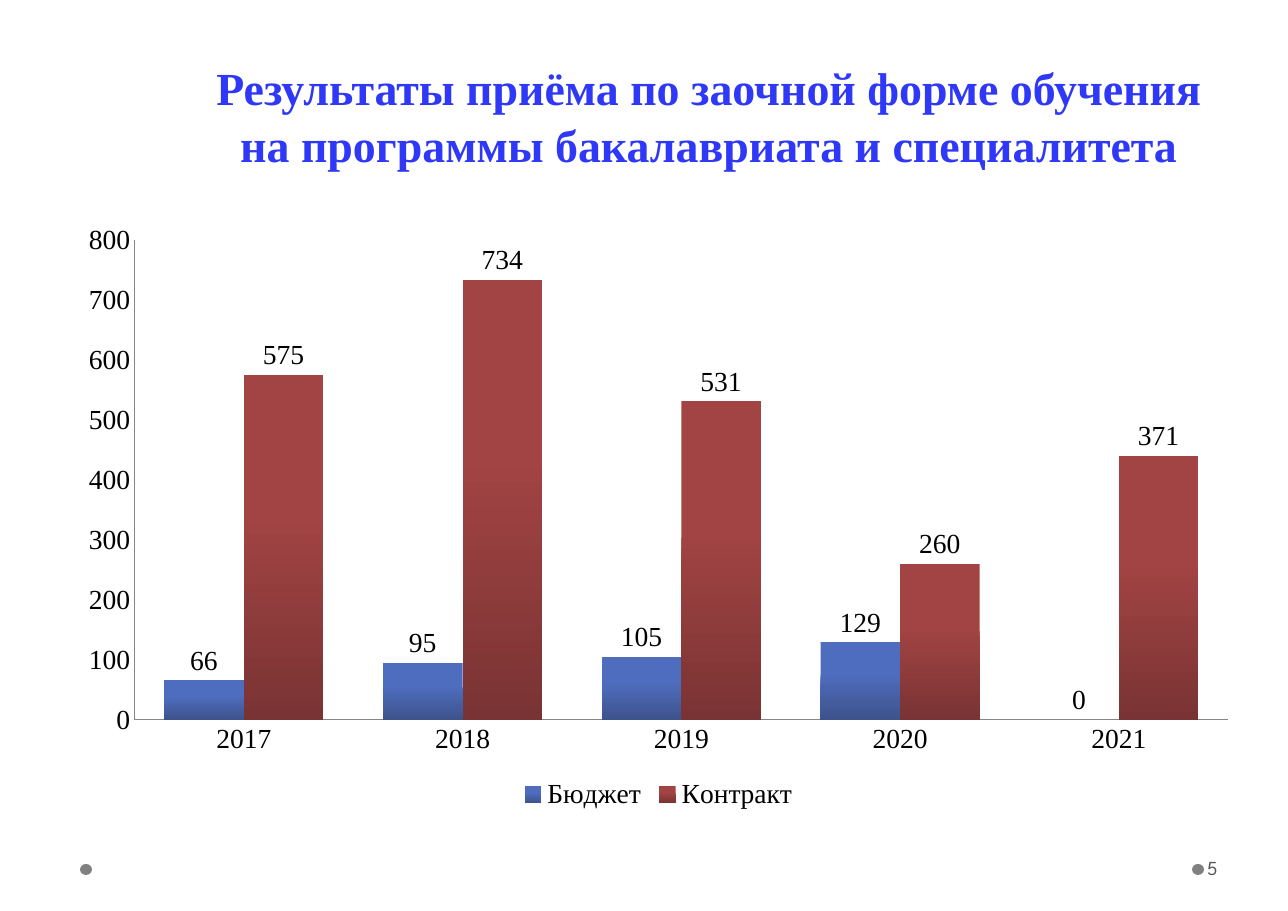
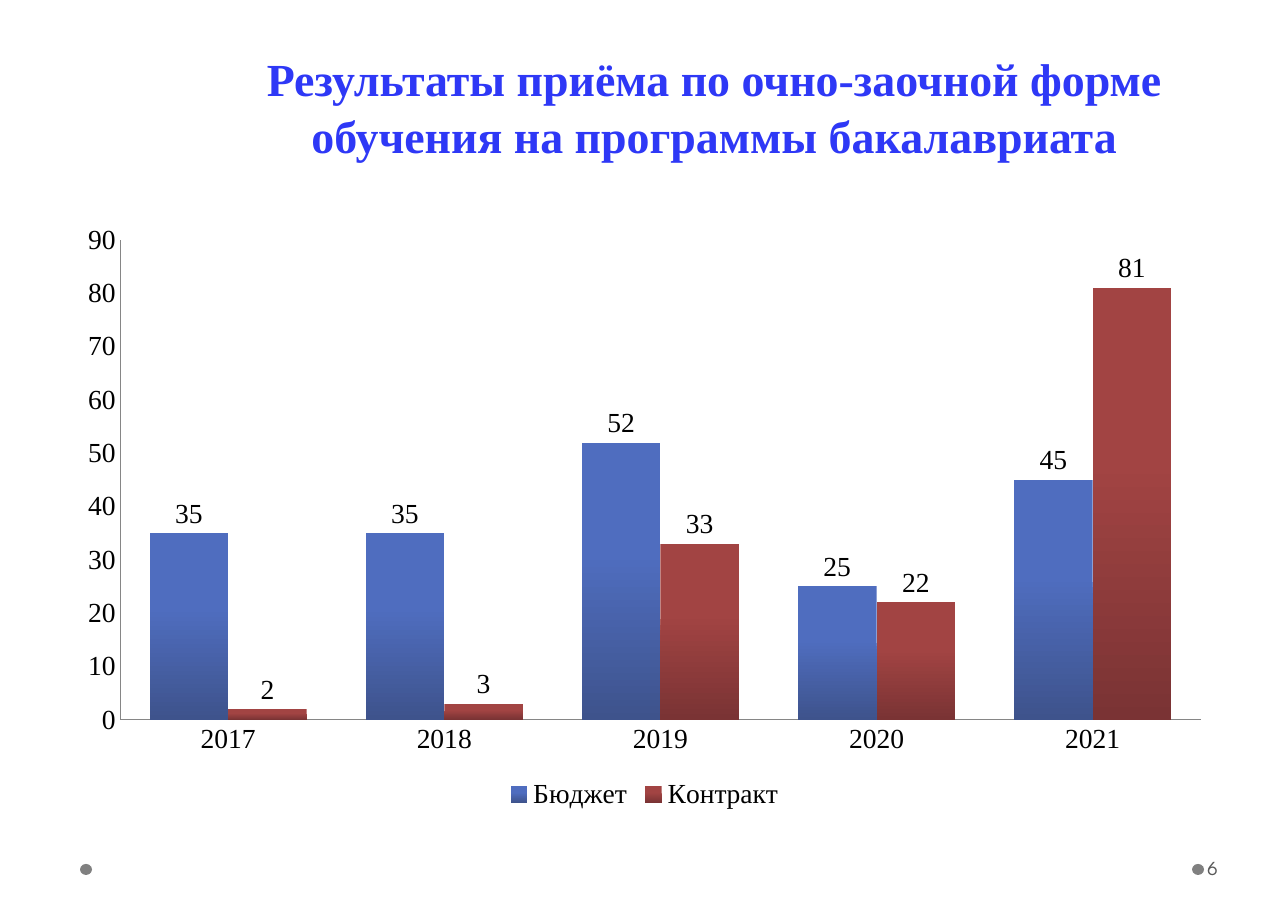
from pptx import Presentation
from pptx.chart.data import CategoryChartData
from pptx.dml.color import RGBColor
from pptx.enum.chart import XL_CHART_TYPE as ChartType
from pptx.enum.chart import XL_LABEL_POSITION as LabelPos
from pptx.enum.chart import XL_LEGEND_POSITION as LegendPos
from pptx.enum.chart import XL_TICK_MARK as Tick
from pptx.enum.shapes import MSO_SHAPE as Shape
from pptx.enum.text import MSO_ANCHOR as Anchor
from pptx.enum.text import PP_ALIGN as Align
from pptx.util import Pt

# Style
PX = 8298  # EMU in one px
SERIF, SANS = "Times New Roman", "League Spartan"
TITLE_BLUE = RGBColor(0x2E, 0x38, 0xF6)
BLACK = RGBColor(0, 0, 0)
DOT_GREY = RGBColor(0x80, 0x80, 0x80)
NUMBER_GREY = RGBColor(0x59, 0x59, 0x59)
AXIS_GREY = RGBColor(0x86, 0x86, 0x86)
BLUE_SHADES = RGBColor(0x4F, 0x6D, 0xBF), RGBColor(0x3E, 0x53, 0x8C)
RED_SHADES = RGBColor(0xA2, 0x44, 0x43), RGBColor(0x7A, 0x33, 0x34)

# Content
YEARS = ["2017", "2018", "2019", "2020", "2021"]
SLIDES = [
    dict(number=5, title_box=(184, 56, 1050, 121), chart_width=1187,
         title="Результаты приёма по заочной форме обучения "
               "на программы бакалавриата и специалитета",
         budget=[66, 95, 105, 129, 0], contract=[575, 734, 531, 260, 440],
         top=800, step=100, contract_labels={4: "371"}),
    dict(number=6, title_box=(168, 47, 1093, 121), chart_width=1159,
         title="Результаты приёма по очно-заочной форме "
               "обучения на программы бакалавриата",
         budget=[35, 35, 52, 25, 45], contract=[2, 3, 33, 22, 81],
         top=90, step=10, contract_labels={}),
]


def set_font(font, name, size, color, bold=False):
    font.name, font.size, font.bold = name, Pt(size), bold
    font.color.rgb = color


class Deck:
    def __init__(self, width, height):
        self.prs = Presentation()
        self.prs.slide_width, self.prs.slide_height = width * PX, height * PX
        self.slide = None

    def new_slide(self):
        self.slide = self.prs.slides.add_slide(self.prs.slide_layouts[6])

    def text(self, box, words, insets, anchor, align):
        frame = self.slide.shapes.add_textbox(*(v * PX for v in box)).text_frame
        frame.word_wrap, frame.vertical_anchor = True, anchor
        frame.margin_left, frame.margin_right = (v * PX for v in insets)
        paragraph = frame.paragraphs[0]
        paragraph.text, paragraph.alignment = words, align
        return paragraph

    def title(self, box, words):
        line = self.text(box, words, (12, 12), Anchor.BOTTOM, Align.CENTER)
        line.line_spacing = 1.04
        set_font(line.font, SERIF, 30, TITLE_BLUE, bold=True)

    def footer_dots(self):
        for left in (1192, 80):
            dot = self.slide.shapes.add_shape(
                Shape.OVAL, left * PX, 864 * PX, 12 * PX, 11 * PX)
            dot.shadow.inherit = False
            dot.fill.solid()
            dot.fill.fore_color.rgb = DOT_GREY
            dot.line.fill.background()

    def page_number(self, number):
        line = self.text((1204, 844, 79, 48), str(number), (3, 5),
                         Anchor.MIDDLE, Align.LEFT)
        set_font(line.font, SANS, 13, NUMBER_GREY)

    def column_chart(self, box, series, top, step):
        data = CategoryChartData()
        data.categories = YEARS
        for name, values, _, _ in series:
            data.add_series(name, values)
        chart = self.slide.shapes.add_chart(
            ChartType.COLUMN_CLUSTERED, *(v * PX for v in box), data).chart
        set_font(chart.font, SERIF, 18, BLACK)
        chart.has_title = False
        chart.has_legend = True
        chart.legend.position = LegendPos.BOTTOM
        chart.legend.include_in_layout = False

        # Axes
        for axis in (chart.category_axis, chart.value_axis):
            axis.major_tick_mark = axis.minor_tick_mark = Tick.NONE
            axis.has_major_gridlines = False
            axis.format.line.color.rgb = AXIS_GREY
            axis.format.line.width = Pt(0.75)
        chart.value_axis.minimum_scale = 0
        chart.value_axis.maximum_scale = top
        chart.value_axis.major_unit = step

        # Columns and their labels
        plot = chart.plots[0]
        plot.gap_width, plot.overlap, plot.vary_by_categories = 75, 0, False
        for columns, (_, _, shades, own_labels) in zip(plot.series, series):
            self.shade(columns.format.fill, shades)
            columns.data_labels.show_value = True
            columns.data_labels.position = LabelPos.OUTSIDE_END
            for index, words in own_labels.items():
                label = columns.points[index].data_label
                label.position = LabelPos.OUTSIDE_END
                line = label.text_frame.paragraphs[0]
                line.text = words
                set_font(line.font, SERIF, 18, BLACK)

    @staticmethod
    def shade(fill, shades):
        fill.gradient()
        fill.gradient_angle = 270
        for stop, color, position in zip(fill.gradient_stops, shades, (0.4, 1)):
            stop.color.rgb, stop.position = color, position


def main():
    deck = Deck(1288, 911)
    for page in SLIDES:
        deck.new_slide()
        deck.footer_dots()
        deck.column_chart(
            (65, 213, page["chart_width"], 602),
            [("Бюджет", page["budget"], BLUE_SHADES, {}),
             ("Контракт", page["contract"], RED_SHADES, page["contract_labels"])],
            page["top"], page["step"])
        deck.page_number(page["number"])
        deck.title(page["title_box"], page["title"])
    deck.prs.save("out.pptx")


if __name__ == "__main__":
    main()
